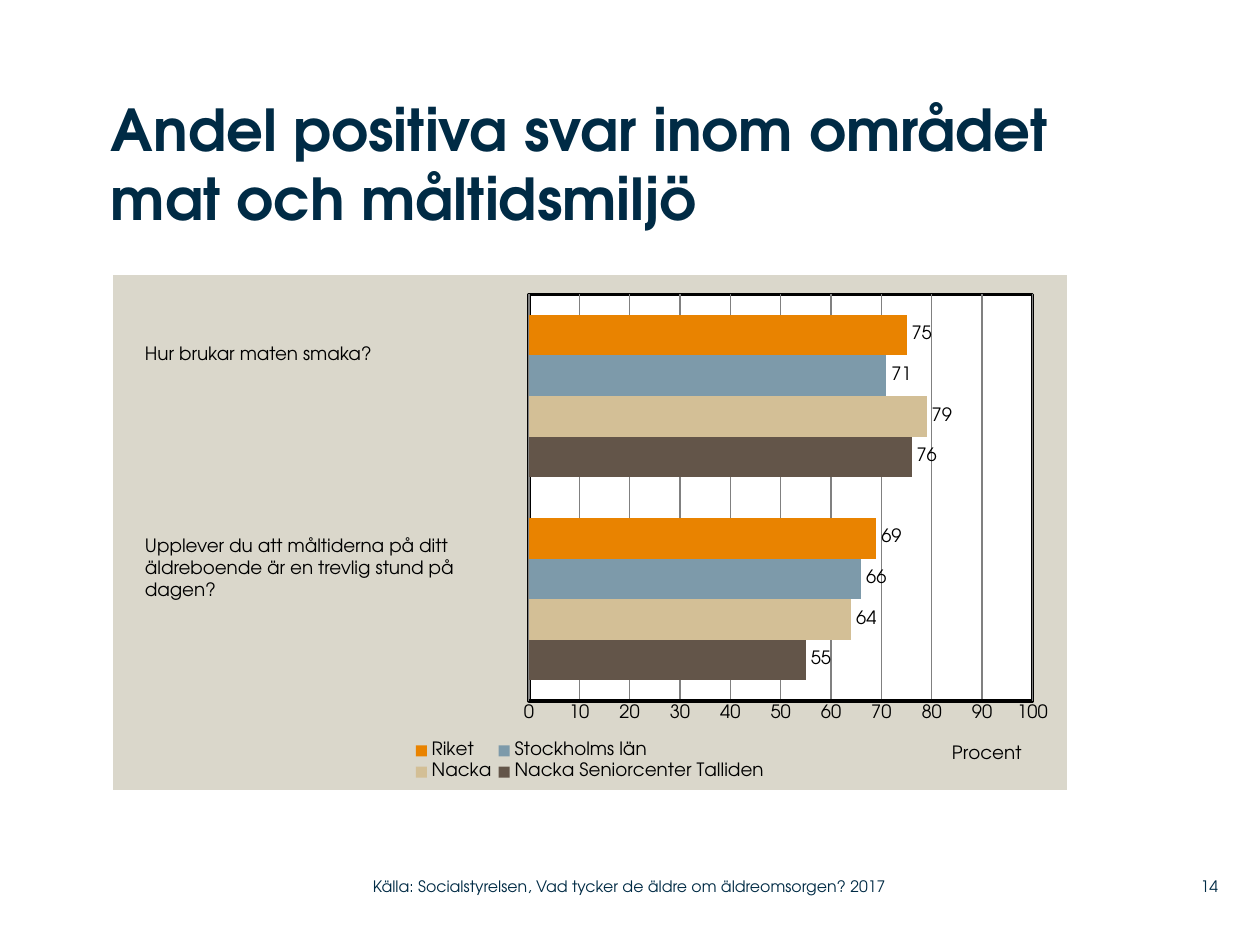
"""Build a slide comparing positive answers about food and mealtimes."""
from lxml import etree
from pptx import Presentation
from pptx import util as u
from pptx.chart.data import CategoryChartData
from pptx.dml.color import RGBColor
from pptx.enum import chart as charts, text
from pptx.oxml import parse_xml
from pptx.oxml.ns import nsdecls, qn

PX = u.Inches(1) / 126
FONT = "TeX Gyre Adventor"
COLORS = {
    "navy": "002B45", "black": "000000", "panel": "DAD7CB", "plot": "FFFFFF", "grid": "808080",
    "Nacka Seniorcenter Talliden": "635549", "Nacka": "D3BF96",
    "Stockholms län": "7D9AAA", "Riket": "E98300",
}


def style(font, size, color="black", bold=False):
    font.name, font.size, font.bold = FONT, u.Pt(size), bold
    font.color.rgb = RGBColor.from_string(COLORS[color])


def place(element, index, target="", **sizes):
    for old in element.findall(qn("c:layout")):
        element.remove(old)
    layout = etree.Element(qn("c:layout"))
    manual = etree.SubElement(layout, qn("c:manualLayout"))
    if target:
        etree.SubElement(manual, qn("c:layoutTarget"), val=target)
    for mode in ("xMode", "yMode"):
        etree.SubElement(manual, qn(f"c:{mode}"), val="edge")
    for key, value in sizes.items():
        etree.SubElement(manual, qn(f"c:{key}"), val=str(value))
    element.insert(index, layout)


prs = Presentation()
prs.slide_width, prs.slide_height = u.Inches(10), u.Inches(7.5)
slide = prs.slides.add_slide(prs.slide_layouts[6])

answers = CategoryChartData()
answers.categories = ["1", "2"]
for region, shares in (
    ("Nacka Seniorcenter Talliden", (55, 76)),
    ("Nacka", (64, 79)),
    ("Stockholms län", (66, 71)),
    ("Riket", (69, 75)),
):
    answers.add_series(region, shares)
chart = slide.shapes.add_chart(
    charts.XL_CHART_TYPE.BAR_CLUSTERED,
    *(int(px * PX) for px in (113, 275, 954, 515)), answers).chart
style(chart.font, 10.5)
chart.has_title = False

bars = chart.plots[0]
bars.gap_width, bars.overlap, bars.vary_by_categories = 100, 0, False
for region in bars.series:
    region.format.fill.solid()
    region.format.fill.fore_color.rgb = RGBColor.from_string(COLORS[region.name])
    labels = region.data_labels
    labels.show_value = True
    labels.position = charts.XL_LABEL_POSITION.OUTSIDE_END
    style(labels.font, 10.5)

chart.category_axis.visible = False
percent = chart.value_axis
percent.minimum_scale, percent.maximum_scale, percent.major_unit = 0, 100, 10
percent.major_tick_mark = charts.XL_TICK_MARK.NONE
percent.format.line.width = u.Pt(2)
percent.format.line.color.rgb = RGBColor.from_string(COLORS["black"])
percent.major_gridlines.format.line.width = u.Pt(0.75)
percent.major_gridlines.format.line.color.rgb = RGBColor.from_string(COLORS["grid"])
style(percent.tick_labels.font, 10.5)
unit = percent.axis_title.text_frame
unit.text = "Procent"
style(unit.paragraphs[0].font, 10.5)

chart.has_legend = True
chart.legend.position = charts.XL_LEGEND_POSITION.BOTTOM
chart.legend.include_in_layout = False
style(chart.legend.font, 10.5)

space = chart.element
plot = space.find(f".//{qn('c:plotArea')}")
place(plot, 0, "inner", x=0.436, y=0.038, w=0.528, h=0.789)
place(percent.axis_title.element if hasattr(percent.axis_title, "element")
      else plot.find(f"{qn('c:valAx')}/{qn('c:title')}"), 1, x=0.876, y=0.905)
place(space.find(f".//{qn('c:legend')}"), 1, x=0.31, y=0.9, w=0.38, h=0.09)

fill = '<c:spPr {}><a:solidFill><a:srgbClr val="{}"/></a:solidFill><a:ln{}</a:ln></c:spPr>'
border = f' w="25400"><a:solidFill><a:srgbClr val="{COLORS["black"]}"/></a:solidFill>'
plot.append(parse_xml(fill.format(nsdecls("c", "a"), COLORS["plot"], border)))
space.find(qn("c:chart")).addnext(
    parse_xml(fill.format(nsdecls("c", "a"), COLORS["panel"], "><a:noFill/>")))

top, middle = text.MSO_ANCHOR.TOP, text.MSO_ANCHOR.MIDDLE
left, right = text.PP_ALIGN.LEFT, text.PP_ALIGN.RIGHT
for lines, box, size, color, bold, inset, anchor, align in (
    (["Andel positiva svar inom området mat och måltidsmiljö"],
     (111, 94, 1061, 179), 33, "navy", True, (0, 0), top, left),
    (["Hur brukar maten smaka?"],
     (132, 336, 374, 35), 10.5, "black", False, (13, 6), top, left),
    (["Upplever du att måltiderna på ditt äldreboende är en trevlig stund på", "dagen?"],
     (132, 528, 369, 79), 10.5, "black", False, (13, 6), top, left),
    (["14"], (1159, 868, 59, 37), 9, "navy", False, (0, 0), middle, right),
    (["Källa: Socialstyrelsen, Vad tycker de äldre om äldreomsorgen? 2017"],
     (373, 868, 558, 37), 9, "navy", False, (0, 0), middle, left),
):
    frame = slide.shapes.add_textbox(*(int(px * PX) for px in box)).text_frame
    frame.word_wrap, frame.vertical_anchor = True, anchor
    frame.margin_left = frame.margin_right = int(inset[0] * PX)
    frame.margin_top = frame.margin_bottom = int(inset[1] * PX)
    frame.text = "\n".join(lines)
    for paragraph in frame.paragraphs:
        paragraph.alignment = align
        style(paragraph.font, size, color, bold)

prs.save("out.pptx")
